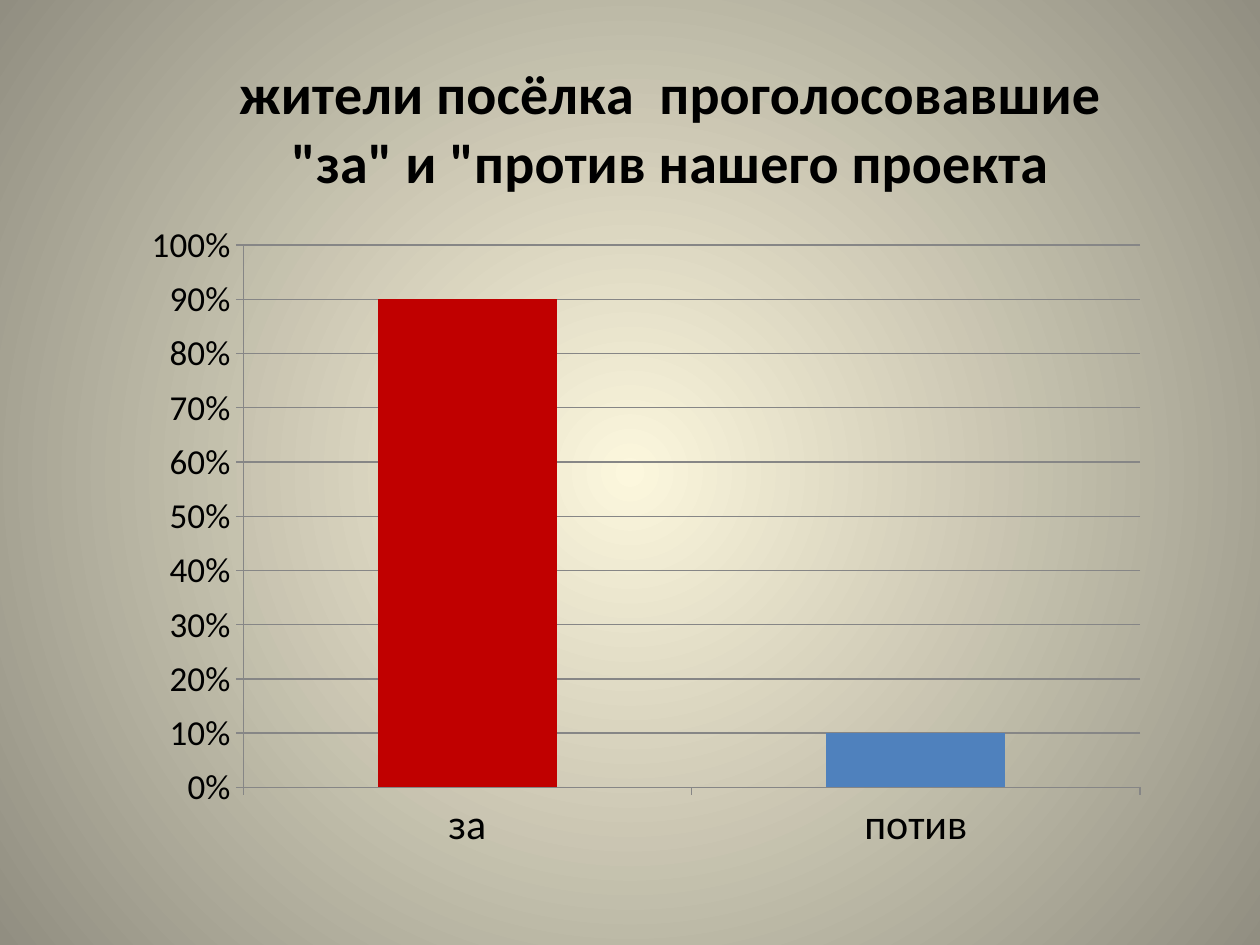
from lxml import etree
from pptx import Presentation
from pptx.chart.data import CategoryChartData
from pptx.dml.color import RGBColor
from pptx.enum.chart import XL_CHART_TYPE, XL_TICK_MARK
from pptx.oxml import parse_xml
from pptx.oxml.ns import nsdecls, qn
from pptx.util import Pt

STACKED = XL_CHART_TYPE.COLUMN_STACKED
OUT = XL_TICK_MARK.OUTSIDE

HUES = {
    "glow": "FCF7DD",
    "edge": "918E81",
    "text": "000000",
    "grid": "868686",
    "yes": "C00000",
    "no": "4F81BD",
}
VOTES = {"за": 0.9, "потив": 0.1}
TITLE = 'жители посёлка  проголосовавшие "за" и "против нашего проекта'


class Deck:
    def __init__(self, wide, high, face):
        self.prs = Presentation()
        self.prs.slide_width, self.prs.slide_height = Pt(wide), Pt(high)
        self.slide = self.prs.slides.add_slide(self.prs.slide_layouts[6])
        self.face = face

    def hue(self, name):
        return RGBColor.from_string(HUES[name])

    def glow(self, inner, outer):
        """Fill the background with a circular gradient from the centre."""
        fill = self.slide.background.fill
        fill.gradient()
        for stop, name in zip(fill.gradient_stops, (inner, outer)):
            stop.color.rgb = self.hue(name)
        line = next(self.slide.element.iter(qn("a:lin")))
        ring = parse_xml(f'<a:path {nsdecls("a")} path="circle"/>')
        etree.SubElement(ring, qn("a:fillToRect"),
                         {side: "50000" for side in "ltrb"})
        line.getparent().replace(line, ring)

    def font(self, font, size, bold=False):
        font.name, font.size, font.bold = self.face, Pt(size), bold
        font.color.rgb = self.hue("text")

    def stroke(self, line):
        line.color.rgb = self.hue("grid")
        line.width = Pt(0.75)

    def axis(self, axis, size):
        axis.major_tick_mark = OUT
        self.font(axis.tick_labels.font, size)
        self.stroke(axis.format.line)

    def place(self, part, spot, at, frame):
        """Lay out a chart part, in points from the chart's corner."""
        for old in part.findall(qn("c:layout")):
            part.remove(old)
        box = parse_xml(f'<c:layout {nsdecls("c")}><c:manualLayout/></c:layout>')
        rules = {"xMode": "edge", "yMode": "edge"}
        if len(at) == 4:
            rules = {"layoutTarget": "inner", **rules}
        rules.update(zip("xywh", (a / b for a, b in zip(at, frame * 2))))
        for tag, val in rules.items():
            etree.SubElement(box[0], qn(f"c:{tag}"), val=str(val))
        part.insert(spot, box)

    def columns(self, box, title, votes, hues):
        data = CategoryChartData(number_format="0%")
        data.categories = list(votes)
        data.add_series("Series 1", list(votes.values()))
        frame = self.slide.shapes.add_chart(STACKED, *map(Pt, box), data)
        chart = frame.chart
        self.font(chart.font, 10)
        chart.has_legend = False

        chart.has_title = True
        head = chart.chart_title
        head.include_in_layout = False
        para = head.text_frame.paragraphs[0]
        para.text = title
        self.font(para.font, 32, True)
        self.place(head._element, 1, (100, 4), box[2:])

        self.axis(chart.category_axis, 24)
        scale = chart.value_axis
        self.axis(scale, 20)
        scale.minimum_scale, scale.maximum_scale = 0, 1
        scale.major_unit = 0.1
        scale.tick_labels.number_format = "0%"
        scale.tick_labels.number_format_is_linked = False
        self.stroke(scale.major_gridlines.format.line)

        plot = chart.plots[0]
        plot.gap_width, plot.overlap = 150, 100
        plot.vary_by_categories = False
        for i, name in enumerate(hues):
            fill = plot.series[0].points[i].format.fill
            fill.solid()
            fill.fore_color.rgb = self.hue(name)
        area = plot._element.getparent()
        self.place(area, 0, (108, 119, 512.5, 310), box[2:])


def main():
    deck = Deck(720, 540, "Calibri")
    deck.glow("glow", "edge")
    deck.columns((31, 21, 657, 493), TITLE, VOTES, ("yes", "no"))
    deck.prs.save("out.pptx")


if __name__ == "__main__":
    main()
